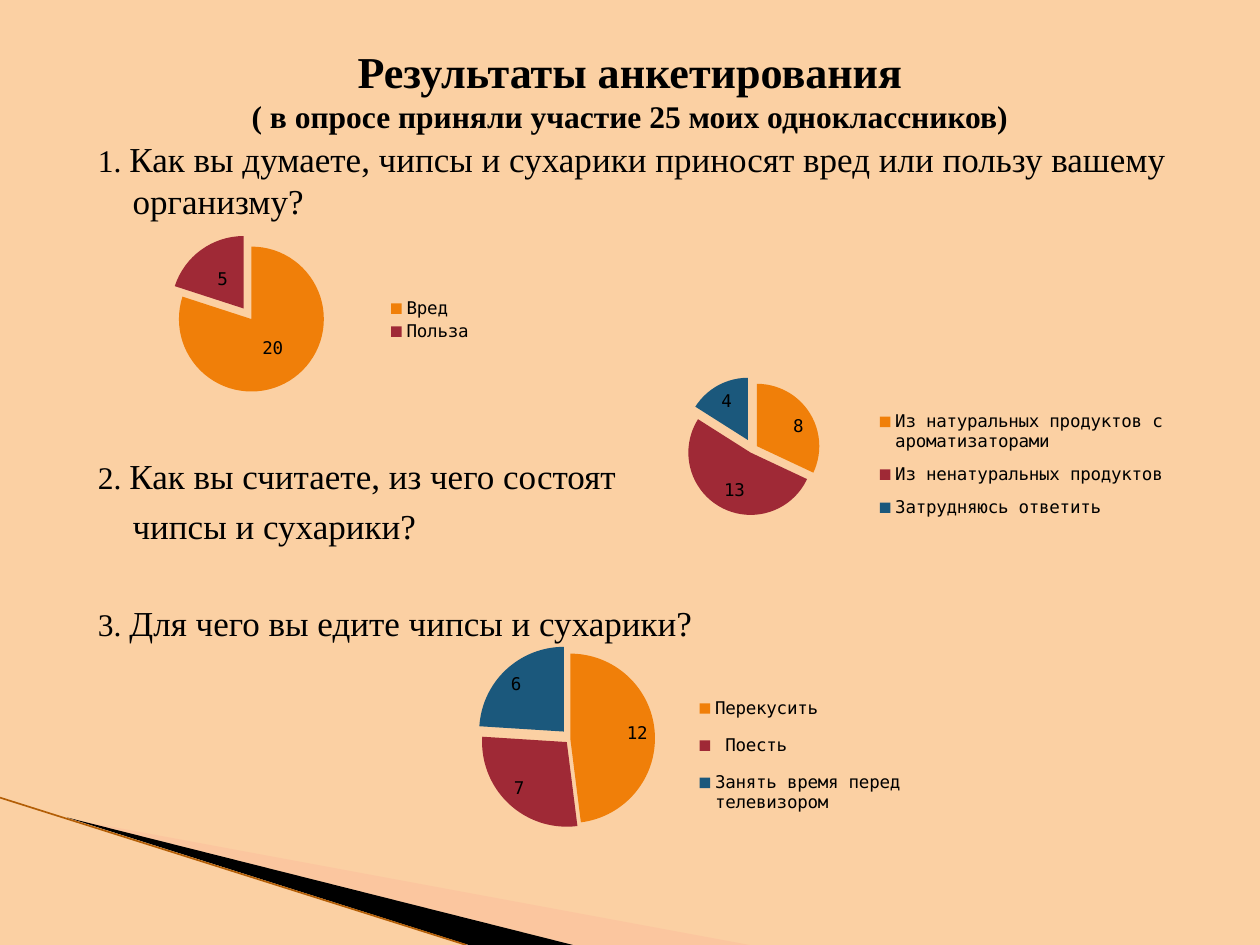
from lxml import etree
from pptx import Presentation
from pptx import util as u
from pptx.chart.data import CategoryChartData
from pptx.dml.color import RGBColor
from pptx.enum import chart as charts, shapes, text
from pptx.oxml import parse_xml
from pptx.oxml.ns import nsdecls, qn

SERIF = "Times New Roman"
MONO = "DejaVu Sans Mono"
BLACK = "000000"
SLICE_COLORS = ("F07F09", "9F2936", "1B587C")


def color(value):
    return RGBColor.from_string(value)


def write(paragraph, wording, **style):
    run = paragraph.add_run()
    run.text = wording
    run.font.name = style.get("font", SERIF)
    run.font.size = u.Pt(style.get("size", 20))
    run.font.bold = style.get("bold", False)
    run.font.color.rgb = color(style.get("ink", BLACK))


def place(shape, left, top, width, height):
    shape.left, shape.top = u.Cm(left), u.Cm(top)
    shape.width, shape.height = u.Cm(width), u.Cm(height)


def add_wedge(slide, points, fill, opacity=100):
    corners = [(u.Cm(x), u.Cm(y)) for x, y in points]
    builder = slide.shapes.build_freeform(*corners[0])
    builder.add_line_segments(corners[1:], close=True)
    wedge = builder.convert_to_shape()
    wedge.shadow.inherit = False
    wedge.line.fill.background()
    wedge.fill.solid()
    wedge.fill.fore_color.rgb = color(fill)
    if opacity < 100:
        tone = wedge._element.spPr.find(qn("a:solidFill"))[0]
        etree.SubElement(tone, qn("a:alpha")).set("val", str(opacity * 1000))


def add_edge(slide, start, end, ink):
    edge = slide.shapes.add_connector(
        shapes.MSO_CONNECTOR.STRAIGHT, *(u.Cm(v) for v in start + end))
    edge.line.color.rgb = color(ink)
    edge.line.width = u.Pt(0.95)
    etree.SubElement(edge._element.spPr, qn("a:effectLst"))


def fill_title(title):
    place(title, 1.27, 0.8, 22.86, 2)
    frame = title.text_frame
    frame.auto_size = text.MSO_AUTO_SIZE.NONE
    frame.vertical_anchor = text.MSO_ANCHOR.MIDDLE
    heading = frame.paragraphs[0]
    heading.alignment = text.PP_ALIGN.CENTER
    write(heading, "Результаты анкетирования", size=25.2, bold=True)
    heading.add_line_break()
    write(heading, "( в опросе приняли участие 25 моих одноклассников)", size=18, bold=True)


def fill_questions(body, questions):
    place(body, 1.4, 2.64, 22.86, 16)
    frame = body.text_frame
    frame.auto_size = text.MSO_AUTO_SIZE.NONE
    for index, (number, wording, gap) in enumerate(questions):
        question = frame.paragraphs[0] if index == 0 else frame.add_paragraph()
        properties = question._p.get_or_add_pPr()
        properties.set("marL", str(u.Cm(1.02)))
        properties.set("indent", str(u.Cm(-0.7 if number else 0)))
        etree.SubElement(properties, qn("a:buNone"))
        question.space_before = u.Pt(gap)
        if number:
            write(question, number, size=18)
        write(question, wording)


def set_layout(parent, bounds, inner=False):
    target = '<c:layoutTarget val="inner"/>' if inner else ""
    modes = "".join(f'<c:{axis}Mode val="edge"/>' for axis in "xy")
    sizes = "".join(f'<c:{key} val="{value}"/>' for key, value in zip("xywh", bounds))
    layout = parse_xml(
        f'<c:layout {nsdecls("c")}><c:manualLayout>{target}{modes}{sizes}'
        "</c:manualLayout></c:layout>")
    for old in parent.findall(qn("c:layout")):
        parent.remove(old)
    if inner:
        parent.insert(0, layout)
    else:
        parent.find(qn("c:legendPos")).addnext(layout)


def explosion(value):
    return parse_xml(f'<c:explosion {nsdecls("c")} val="{value}"/>')


def add_pie(slide, bounds, answers, plot, legend, spread, offsets, label_position):
    data = CategoryChartData()
    data.categories = list(answers)
    data.add_series("Series 1", list(answers.values()))
    pie = slide.shapes.add_chart(
        charts.XL_CHART_TYPE.PIE, *(u.Cm(v) for v in bounds), data).chart
    pie.has_title = False
    pie.font.name = MONO
    pie.font.size = u.Pt(10)
    pie.font.color.rgb = color(BLACK)
    pie.has_legend = True
    pie.legend.position = charts.XL_LEGEND_POSITION.RIGHT
    pie.legend.include_in_layout = False
    set_layout(pie.legend._element, legend)
    set_layout(pie._chartSpace.chart.plotArea, plot, inner=True)

    series = pie.plots[0].series[0]
    for index in range(len(answers)):
        slice_format = series.points[index].format
        slice_format.fill.solid()
        slice_format.fill.fore_color.rgb = color(SLICE_COLORS[index])
        slice_format.line.fill.background()
    for point, offset in zip(series._element.findall(qn("c:dPt")), offsets):
        point.find(qn("c:spPr")).addprevious(explosion(offset))
    series._element.find(qn("c:dPt")).addprevious(explosion(spread))

    labels = series.data_labels
    labels.show_value = True
    labels.show_percentage = False
    labels.position = label_position


def main():
    deck = Presentation()
    deck.slide_width, deck.slide_height = u.Cm(25.4), u.Cm(19.05)
    slide = deck.slides.add_slide(deck.slide_layouts[1])
    slide.background.fill.solid()
    slide.background.fill.fore_color.rgb = color("FBD0A3")

    title, body = [holder for holder in slide.placeholders]
    add_wedge(slide, [(1.4, 16.51), (15.11, 19.05), (11.58, 19.05)], "FCB79B", 40)
    add_wedge(slide, [(1.35, 16.48), (11.55, 19.05), (9.45, 19.05)], BLACK)
    add_edge(slide, (0, 16.08), (9.4, 19.05), "B35E06")

    fill_title(title)
    fill_questions(body, [
        ("1. ", "Как вы думаете, чипсы и сухарики приносят вред или пользу вашему организму?", 0),
        ("2. ", "Как вы считаете, из чего состоят", 133),
        ("", "чипсы и сухарики?", 5),
        ("3. ", "Для чего вы едите чипсы и сухарики?", 31),
    ])

    positions = charts.XL_LABEL_POSITION
    add_pie(slide, (2.39, 4.37, 7.34, 4.17), {"Вред": 20, "Польза": 5},
            (0.13, 0.08, 0.47, 0.83), (0.73, 0.38, 0.25, 0.24),
            18, (0, 18), positions.CENTER)
    add_pie(slide, (12.7, 6.55, 11.51, 4.95),
            {"Из натуральных продуктов с ароматизаторами": 8,
             "Из ненатуральных продуктов": 13,
             "Затрудняюсь ответить": 4},
            (0.06, 0.14, 0.31, 0.73), (0.41, 0.3, 0.55, 0.54),
            42, (8, 7, 16), positions.INSIDE_END)
    add_pie(slide, (7.92, 12.29, 10.52, 5.77),
            {"Перекусить": 12, " Поесть": 7, "Занять время перед телевизором": 6},
            (0.09, 0.08, 0.5, 0.74), (0.58, 0.25, 0.4, 0.52),
            25, (0, 6, 11), positions.INSIDE_END)
    deck.save("out.pptx")


if __name__ == "__main__":
    main()
